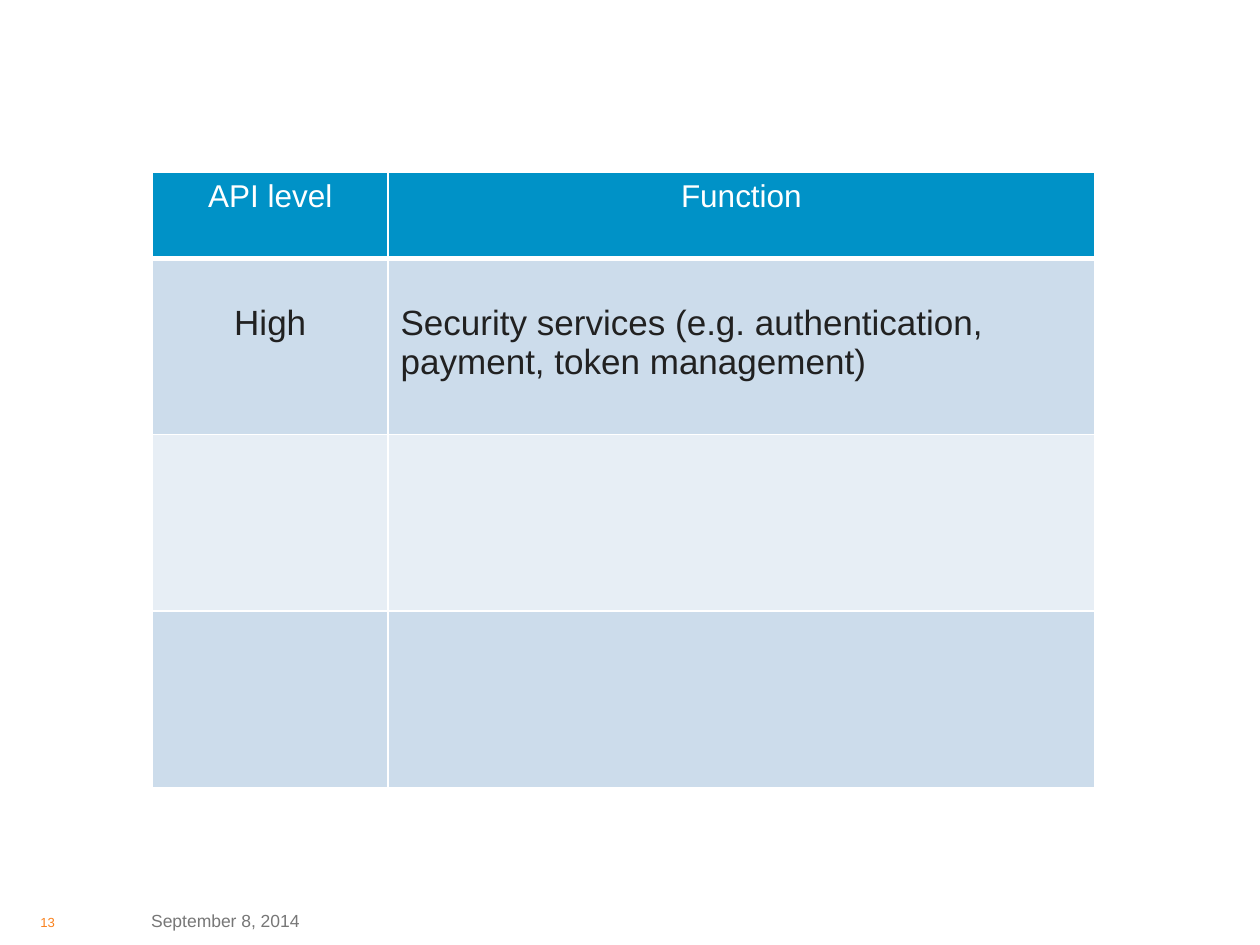
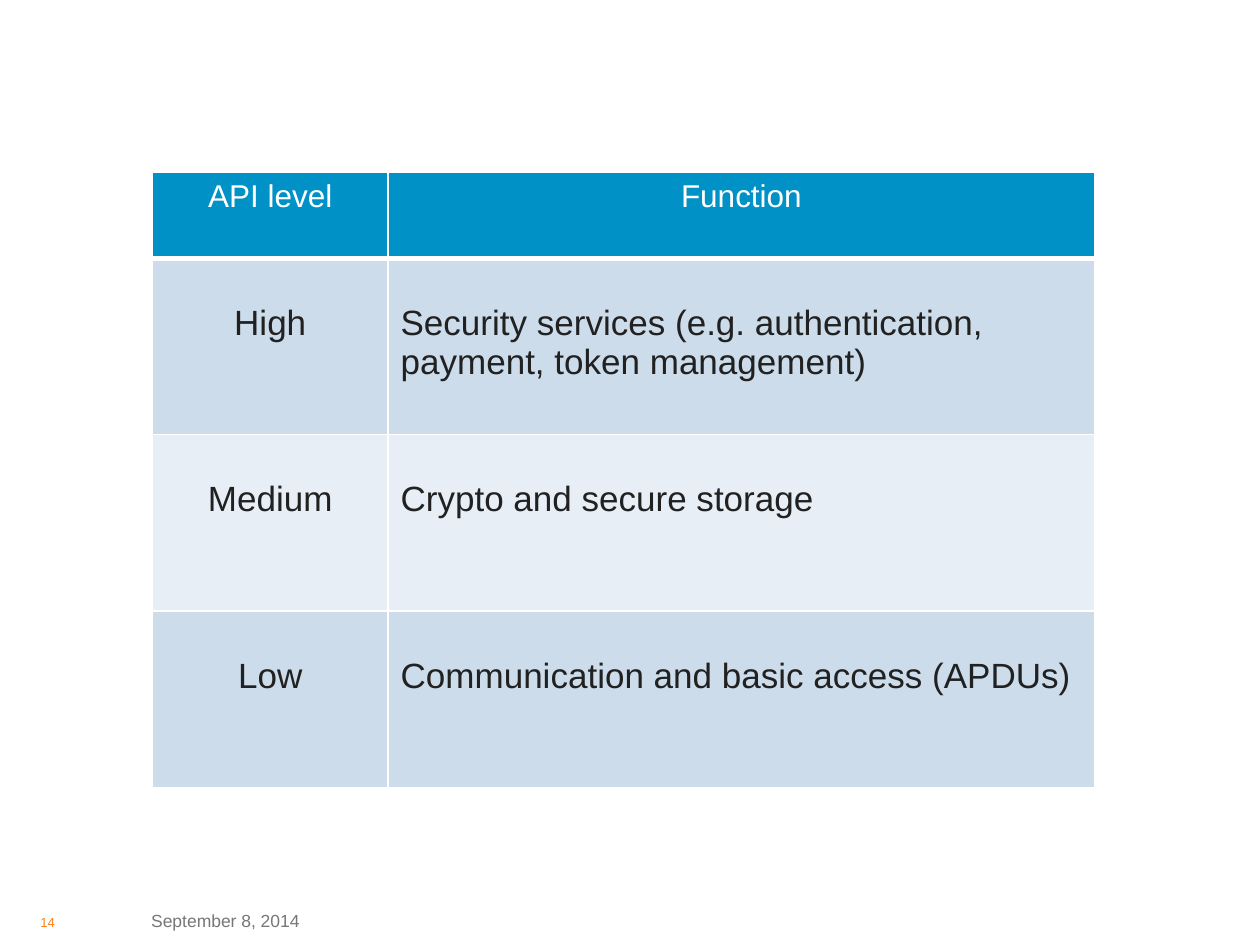
from dataclasses import dataclass

from lxml import etree
from pptx import Presentation
from pptx.dml.color import RGBColor
from pptx.enum import text
from pptx.oxml import ns
from pptx.util import Inches, Pt


@dataclass(frozen=True)
class Theme:
    """Colours, font and type sizes shared by the slides."""
    font: str = "Arial"
    white: str = "FFFFFF"
    header: str = "0092C7"
    bands: tuple = ("CCDCEB", "E7EEF5")
    ink: str = "212121"
    date: str = "777777"
    number: str = "FA821E"
    header_size: float = 18
    body_size: float = 20
    date_size: float = 10
    number_size: float = 7.5
    border: float = 1
    header_rule: float = 3


THEME = Theme()
HEADINGS = ("API level", "Function")
LEVELS = (
    ("High", "Security services (e.g. authentication, payment, token management)"),
    ("Medium", "Crypto and secure storage"),
    ("Low", "Communication and basic access (APDUs)"),
)
COLUMN_WIDTHS = (1.87, 5.61)
HEADER_HEIGHT = 0.68
LEVEL_HEIGHT = 1.4
FIRST_NUMBER = 13
TABLE_BOX = (1.21, 1.37, sum(COLUMN_WIDTHS), HEADER_HEIGHT + LEVEL_HEIGHT * len(LEVELS))
NUMBER_BOX = (0.32, 7.22, 0.28, 0.2)
DATE_BOX = (1.16, 7.11, 3.12, 0.39)


def apply(target, values):
    """Set each attribute named in values on target."""
    for name, value in values.items():
        setattr(target, name, value)


def write(paragraph, wording, size, colour, align=text.PP_ALIGN.LEFT):
    """Fill a paragraph with one styled run."""
    paragraph.alignment = align
    run = paragraph.add_run()
    run.text = wording
    apply(run.font, {"name": THEME.font, "size": Pt(size), "bold": False})
    run.font.color.rgb = RGBColor.from_string(colour)


def add_footer_text(slide, box, wording, size, colour, inset):
    """Place one vertically centred footer text in its box."""
    footer = slide.shapes.add_textbox(*map(Inches, box)).text_frame
    sides = ("margin_left", "margin_top", "margin_right", "margin_bottom")
    apply(footer, dict.fromkeys(sides, Inches(inset)))
    apply(footer, {"word_wrap": True, "vertical_anchor": text.MSO_ANCHOR.MIDDLE})
    write(footer.paragraphs[0], wording, size, colour)


def set_borders(cell, bottom):
    """Draw white borders around a cell, with its own bottom width."""
    properties = cell._tc.get_or_add_tcPr()
    for side in "LRTB":
        width = bottom if side == "B" else THEME.border
        line = etree.SubElement(properties, ns.qn(f"a:ln{side}"), w=str(Pt(width)))
        fill = etree.SubElement(line, ns.qn("a:solidFill"))
        etree.SubElement(fill, ns.qn("a:srgbClr"), val=THEME.white)


def fill_cell(cell, wording, colour, size, ink, align, top, bottom):
    """Give a cell its borders, fill, margin and wording."""
    set_borders(cell, bottom)
    cell.fill.solid()
    cell.fill.fore_color.rgb = RGBColor.from_string(colour)
    cell.margin_top = Inches(top)
    if wording:
        write(cell.text_frame.paragraphs[0], wording, size, ink, align)


def add_level_table(slide, box, shown):
    """Place the API level table with the first levels filled in."""
    table = slide.shapes.add_table(
        len(LEVELS) + 1, len(HEADINGS), *map(Inches, box)).table
    for column, width in zip(table.columns, COLUMN_WIDTHS):
        column.width = Inches(width)
    for index, row in enumerate(table.rows):
        row.height = Inches(LEVEL_HEIGHT if index else HEADER_HEIGHT)
    centre, left = text.PP_ALIGN.CENTER, text.PP_ALIGN.LEFT
    for column, heading in enumerate(HEADINGS):
        fill_cell(table.cell(0, column), heading, THEME.header, THEME.header_size,
                  THEME.white, centre, 0.05, THEME.header_rule)
    for index, level in enumerate(LEVELS):
        band = THEME.bands[index % len(THEME.bands)]
        for column, (wording, align) in enumerate(zip(level, (centre, left))):
            fill_cell(table.cell(index + 1, column), wording if index < shown else "",
                      band, THEME.body_size, THEME.ink, align, 0.36, THEME.border)


def add_level_slide(deck, number, shown):
    """Add one slide with the level table and the footer."""
    slide = deck.slides.add_slide(deck.slide_layouts[6])
    add_footer_text(slide, NUMBER_BOX, str(number), THEME.number_size, THEME.number, 0)
    add_level_table(slide, TABLE_BOX, shown)
    add_footer_text(slide, DATE_BOX, "September 8, 2014", THEME.date_size, THEME.date, 0.04)


def main():
    """Build the deck and save it."""
    deck = Presentation()
    apply(deck, {"slide_width": Inches(10), "slide_height": Inches(7.5)})
    for number, shown in enumerate((1, len(LEVELS)), FIRST_NUMBER):
        add_level_slide(deck, number, shown)
    deck.save("out.pptx")


if __name__ == "__main__":
    main()
